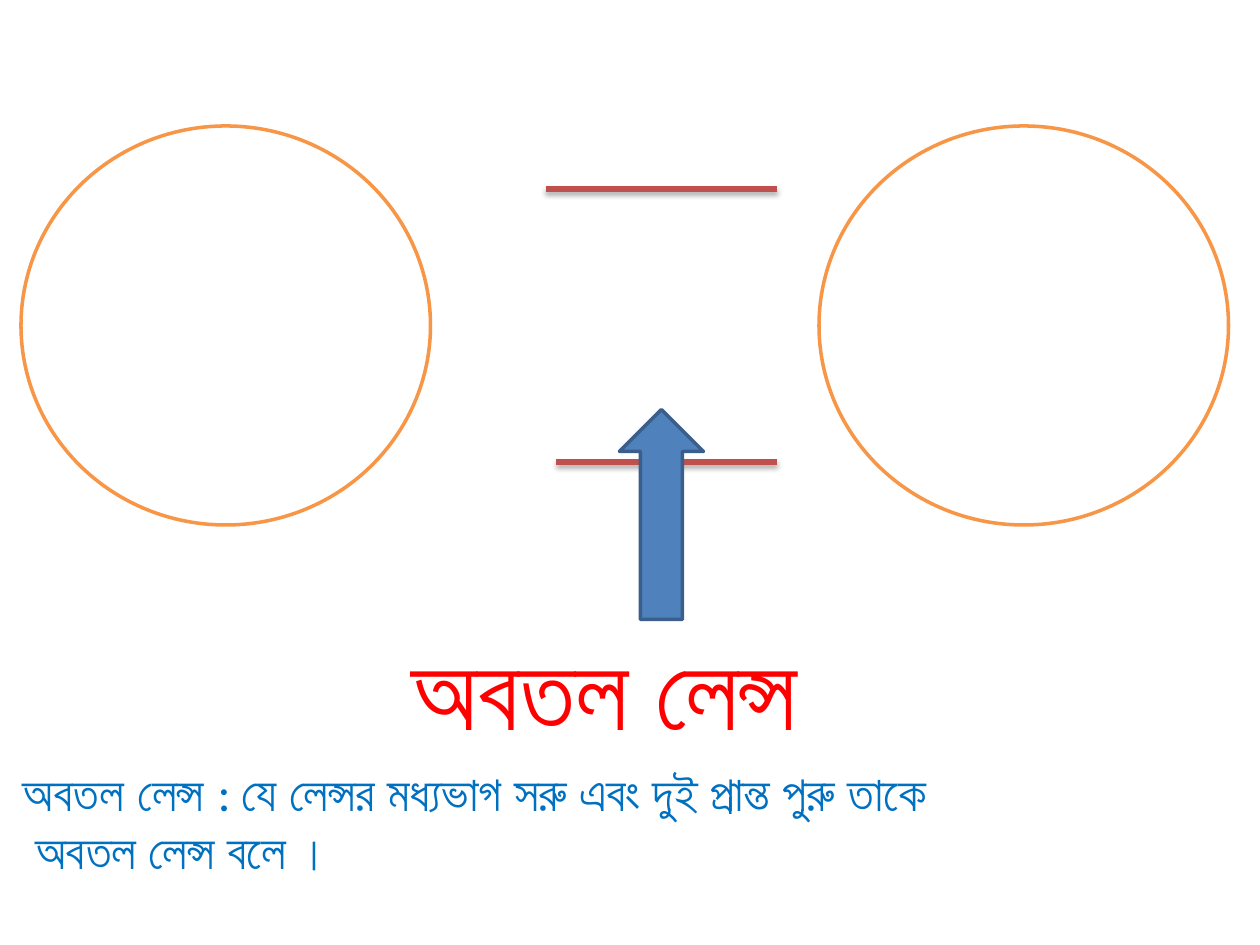
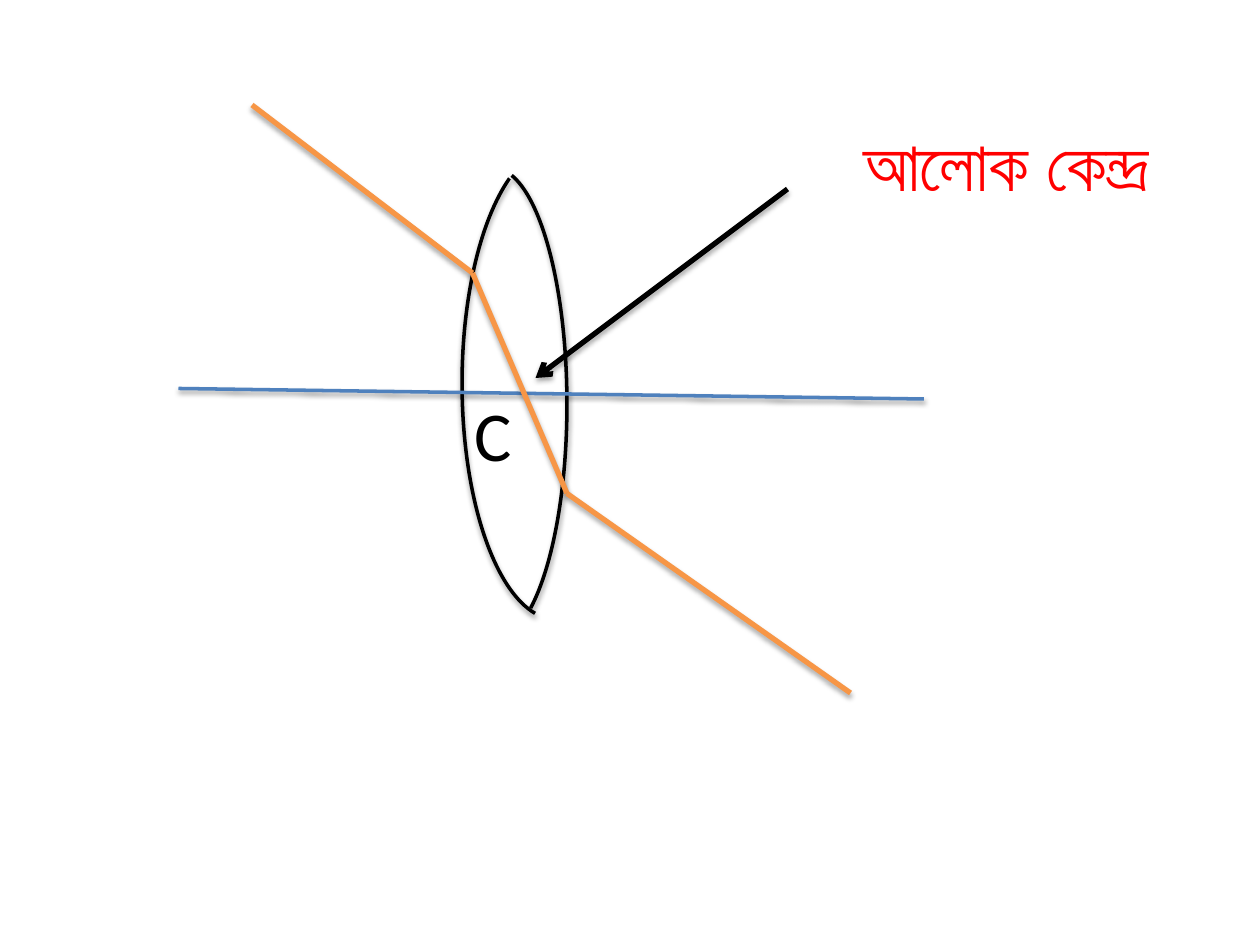
"""Build two slides on the concave lens and the optical centre."""
from dataclasses import dataclass
from itertools import pairwise
from typing import Any

from lxml.etree import SubElement as Sub
from pptx import Presentation
from pptx.dml.color import RGBColor as Rgb
from pptx.enum.shapes import MSO_CONNECTOR as Conn, MSO_SHAPE as Kind
from pptx.enum.text import MSO_ANCHOR as Anchor, MSO_AUTO_SIZE as Auto, PP_ALIGN as Align
from pptx.oxml.ns import qn
from pptx.slide import Slide
from pptx.util import Pt

ORANGE = Rgb(0xF7, 0x96, 0x46)
BRICK = Rgb(0xC0, 0x50, 0x4D)
BLUE = Rgb(0x4F, 0x81, 0xBD)
NAVY = Rgb(0x3A, 0x5F, 0x8C)
SKY = Rgb(0x00, 0x70, 0xC0)
RED = Rgb(0xFF, 0x00, 0x00)
BLACK = Rgb(0x00, 0x00, 0x00)
FONT = "Calibri"
TITLE_ONLY = 5
FRAME = {"word_wrap": False, "auto_size": Auto.NONE, "vertical_anchor": Anchor.TOP}

Box = tuple[float, float, float, float]
Point = tuple[float, float]


@dataclass(frozen=True)
class Shade:
    alpha: int
    drop: float


@dataclass(frozen=True)
class Form:
    kind: Kind
    box: Box
    line: Rgb
    fill: Rgb | None = None
    turn: float = 0
    bends: tuple[float, ...] = ()
    shade: Shade | None = None


@dataclass(frozen=True)
class Stroke:
    start: Point
    end: Point
    color: Rgb
    shade: Shade
    width: float = 3
    arrow: bool = False


@dataclass(frozen=True)
class Run:
    text: str
    bold: bool | None = None


@dataclass(frozen=True)
class Label:
    box: Box
    size: float
    color: Rgb
    lines: tuple[tuple[Run, ...], ...]
    title: bool = False


SOFT = Shade(38, 1.6)
DEEP = Shade(35, 1.8)


def apply(item: Any, style: dict[str, Any]) -> None:
    for name, value in style.items():
        setattr(item, name, value)


def place(shape: Any, box: Box) -> None:
    apply(shape, dict(zip(("left", "top", "width", "height"), map(Pt, box))))


def cast(props: Any, shade: Shade) -> None:
    found = props.find(qn("a:effectLst"))
    group = Sub(props, qn("a:effectLst")) if found is None else found
    outer = Sub(group, qn("a:outerShdw"), blurRad=str(Pt(3.1)), dist=str(Pt(shade.drop)),
                dir="5400000", rotWithShape="0")
    tint = Sub(outer, qn("a:srgbClr"), val=str(BLACK))
    Sub(tint, qn("a:alpha"), val=str(shade.alpha * 1000))


def draw_form(slide: Slide, form: Form) -> None:
    shape = slide.shapes.add_shape(form.kind, *map(Pt, form.box))
    shape.rotation = form.turn
    for index, bend in enumerate(form.bends):
        shape.adjustments[index] = bend
    if form.fill is None:
        shape.fill.background()
    else:
        shape.fill.solid()
        shape.fill.fore_color.rgb = form.fill
    shape.line.color.rgb = form.line
    shape.line.width = Pt(2)
    shape.shadow.inherit = False
    if form.shade:
        cast(shape.element.spPr, form.shade)


def draw_stroke(slide: Slide, stroke: Stroke) -> None:
    link = slide.shapes.add_connector(Conn.STRAIGHT, *map(Pt, stroke.start + stroke.end))
    link.line.color.rgb = stroke.color
    link.line.width = Pt(stroke.width)
    props = link.element.spPr
    if stroke.arrow:
        Sub(props.find(qn("a:ln")), qn("a:tailEnd"), type="arrow")
    cast(props, stroke.shade)


def draw_label(slide: Slide, label: Label) -> None:
    shapes = slide.shapes
    shape = shapes.title if label.title else shapes.add_textbox(*map(Pt, label.box))
    place(shape, label.box)
    frame = shape.text_frame
    apply(frame, FRAME)
    for index, line in enumerate(label.lines):
        para = frame.add_paragraph() if index else frame.paragraphs[0]
        para.alignment = Align.LEFT
        for part in line:
            run = para.add_run()
            run.text = part.text
            apply(run.font, {"name": FONT, "size": Pt(label.size), "bold": part.bold})
            run.font.color.rgb = label.color


DRAW = {Form: draw_form, Stroke: draw_stroke, Label: draw_label}

CONCAVE = (
    *(Form(Kind.OVAL, (left, 72, 234, 228), ORANGE) for left in (12, 468)),
    Stroke((312, 108), (444, 108), BRICK, DEEP),
    Stroke((318, 264), (444, 264), BRICK, DEEP),
    Form(Kind.UP_ARROW, (354, 234, 48, 120), NAVY, BLUE),
    Label((228, 354, 241, 80), 60, RED, ((Run("অবতল লেন্স"),),), title=True),
    Label((6, 432, 536, 75), 28, SKY, (
        (Run("অবতল লেন্স ", True), Run(": যে লেন্সর মধ্যভাগ সরু এবং দুই প্রান্ত পুরু তাকে")),
        (Run(" অবতল লেন্স বলে ।"),),
    )),
)

RAY = ((144, 60), (270, 156), (324, 282), (486, 396))
CENTRE = (
    Form(Kind.ARC, (240, 96, 84, 270), BLACK, bends=(164.73, 47.81), shade=SOFT),
    Form(Kind.ARC, (264, 84, 108, 270), BLACK, turn=180, bends=(165.2, 46.23), shade=SOFT),
    Stroke((102, 222), (528, 228), BLUE, SOFT, width=2),
    *(Stroke(start, end, ORANGE, DEEP) for start, end in pairwise(RAY)),
    Stroke((450, 108), (306, 216), BLACK, DEEP, arrow=True),
    Label((486, 66, 183, 55.4), 40, RED, ((Run("আলোক কেন্দ্র"),),), title=True),
    Label((264, 220, 44.6, 55.4), 40, BLACK, ((Run("C"),),)),
)


def main() -> None:
    deck = Presentation()
    apply(deck, {"slide_width": Pt(720), "slide_height": Pt(540)})
    for items in (CONCAVE, CENTRE):
        slide = deck.slides.add_slide(deck.slide_layouts[TITLE_ONLY])
        for item in items:
            DRAW[type(item)](slide, item)
    deck.save("out.pptx")


if __name__ == "__main__":
    main()
